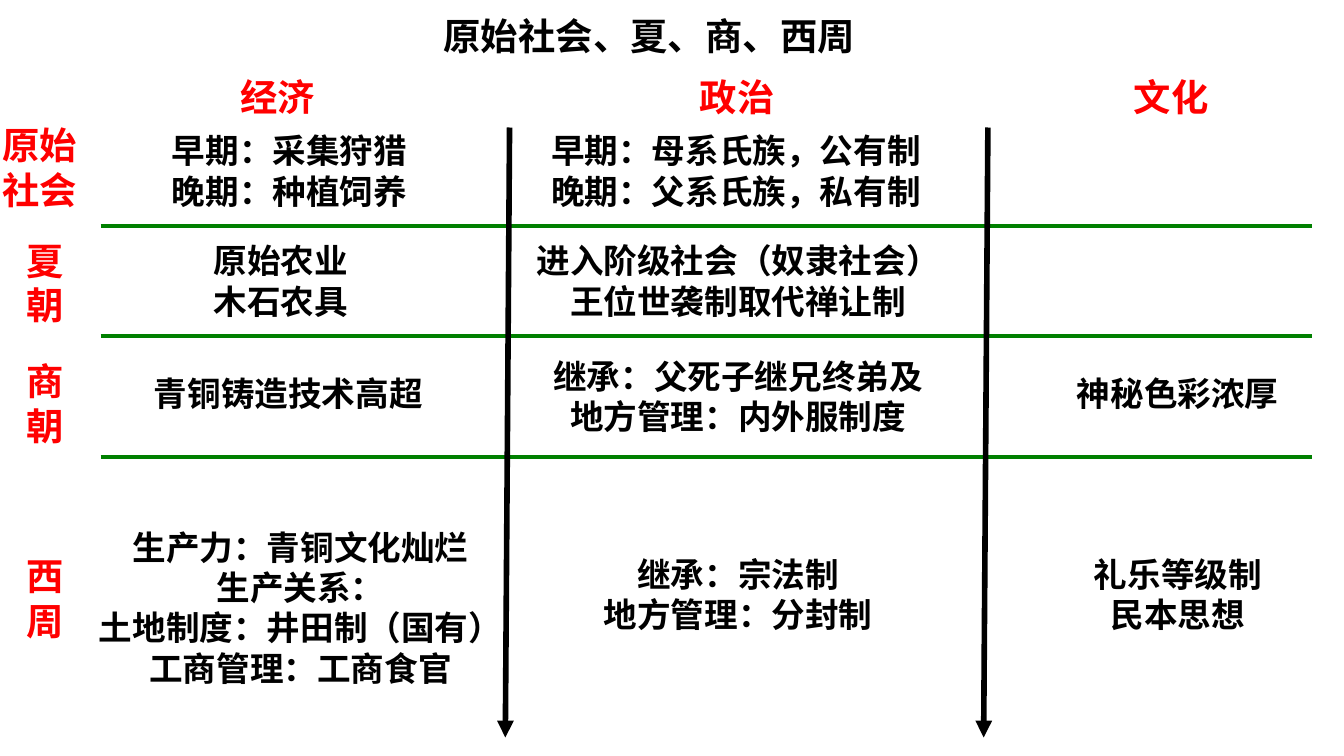
from lxml.etree import SubElement
from pptx import Presentation
from pptx.dml.color import RGBColor
from pptx.enum.shapes import MSO_CONNECTOR
from pptx.enum.text import MSO_ANCHOR, MSO_AUTO_SIZE, PP_ALIGN
from pptx.oxml.ns import qn
from pptx.util import Cm, Pt

BLACK, RED, GREEN = "000000", "FF0000", "008000"
HEAD, BODY = "Noto Sans CJK SC", "Calibri"
LEFT, MID = PP_ALIGN.LEFT, PP_ALIGN.CENTER

# Each cell: middle x, top y, alignment, lines
CELLS = [
    (5.51, 2.34, LEFT, ["早期：采集狩猎", "晚期：种植饲养"]),
    (13.95, 2.34, LEFT, ["早期：母系氏族，公有制", "晚期：父系氏族，私有制"]),
    (5.35, 4.42, LEFT, ["原始农业", "木石农具"]),
    (13.95, 4.42, MID, ["进入阶级社会（奴隶社会）", "王位世袭制取代禅让制"]),
    (5.49, 6.93, LEFT, ["青铜铸造技术高超"]),
    (13.95, 6.6, MID, ["继承：父死子继兄终弟及", "地方管理：内外服制度"]),
    (22.26, 6.93, MID, ["神秘色彩浓厚"]),
    (5.68, 9.83, MID, ["生产力：青铜文化灿烂", "生产关系：",
                       "土地制度：井田制（国有）", "工商管理：工商食官"]),
    (13.95, 10.34, MID, ["继承：宗法制", "地方管理：分封制"]),
    (22.26, 10.34, MID, ["礼乐等级制", "民本思想"]),
]


def paint(color, code):
    color.rgb = RGBColor.from_string(code)


def place(shape, box):
    shape.left, shape.top, shape.width, shape.height = map(Cm, box)


def write(shape, lines, size, font, code, align=LEFT, wrap=False):
    frame = shape.text_frame
    frame.word_wrap = wrap
    frame.auto_size = MSO_AUTO_SIZE.SHAPE_TO_FIT_TEXT
    frame.vertical_anchor = MSO_ANCHOR.TOP
    for i, line in enumerate(lines):
        para = frame.add_paragraph() if i else frame.paragraphs[0]
        para.alignment = align
        para.line_spacing = Pt(size * 1.2)
        para.space_before = Pt(0)
        run = para.add_run()
        run.text = line
        run.font.size = Pt(size)
        run.font.bold = True
        run.font.name = font
        paint(run.font.color, code)
        if font == HEAD:
            SubElement(run.font._element, qn("a:ea"), typeface=font)


def add_text(slide, box, *args, **opts):
    shape = slide.shapes.add_textbox(*map(Cm, box))
    write(shape, *args, **opts)


def add_line(slide, start, end, code, width, arrow=False):
    line = slide.shapes.add_connector(
        MSO_CONNECTOR.STRAIGHT, *map(Cm, start + end))
    paint(line.line.color, code)
    line.line.width = Pt(width)
    if arrow:
        SubElement(line.line._get_or_add_ln(), qn("a:tailEnd"), type="triangle")
    SubElement(line._element.spPr, qn("a:effectLst"))


def add_title(slide, box):
    title = slide.shapes.title
    place(title, box)
    write(title, ["原始社会、夏、商、西周"], 20, HEAD, BLACK)


def add_rules(slide, box):
    """Draw the green lines between the periods."""
    left, top, width, _ = box
    for drop in (0, 2.08, 4.37):
        y = top + drop
        add_line(slide, (left, y), (left + width, y), GREEN, 2)


def add_periods(slide, box):
    left, top, width, high = box
    add_text(slide, (left, top, width, high), ["原始社会"], 20, HEAD, RED,
             wrap=True)
    for name, drop in (("夏朝", 2.19), ("商朝", 4.47), ("西周", 8.16)):
        add_text(slide, (left + 0.45, top + drop, 1.24, high), [name],
                 20, HEAD, RED, wrap=True)


def add_topics(slide, box):
    left, top, width, high = box
    for name, shift in (("经济", 0), ("政治", 8.69), ("文化", 16.89)):
        add_text(slide, (left + shift, top, width, high), [name],
                 20, HEAD, RED)


def add_arrows(slide, box):
    """Draw the slightly tilted arrows between the topics."""
    left, top, width, high = box
    for x in (left, left + width):
        add_line(slide, (x, top), (x - 0.08, top + high), BLACK, 3, arrow=True)


def add_cells(slide):
    for mid, top, align, lines in CELLS:
        width = 0.58 + 0.635 * max(map(len, lines))
        high = 0.25 + 0.77 * len(lines)
        add_text(slide, (mid - width / 2, top, width, high), lines,
                 18, BODY, BLACK, align=align)


def main():
    deck = Presentation()
    deck.slide_width, deck.slide_height = Cm(25.4), Cm(14.29)
    slide = deck.slides.add_slide(deck.slide_layouts[5])
    add_title(slide, (8.13, 0.13, 8.36, 1.12))
    add_rules(slide, (1.9, 4.27, 22.9, 4.37))
    add_periods(slide, (-0.2, 2.18, 1.98, 1.96))
    add_topics(slide, (4.29, 1.28, 1.93, 1.12))
    add_arrows(slide, (9.63, 2.41, 9.04, 11.53))
    add_cells(slide)
    deck.save("out.pptx")


if __name__ == "__main__":
    main()
